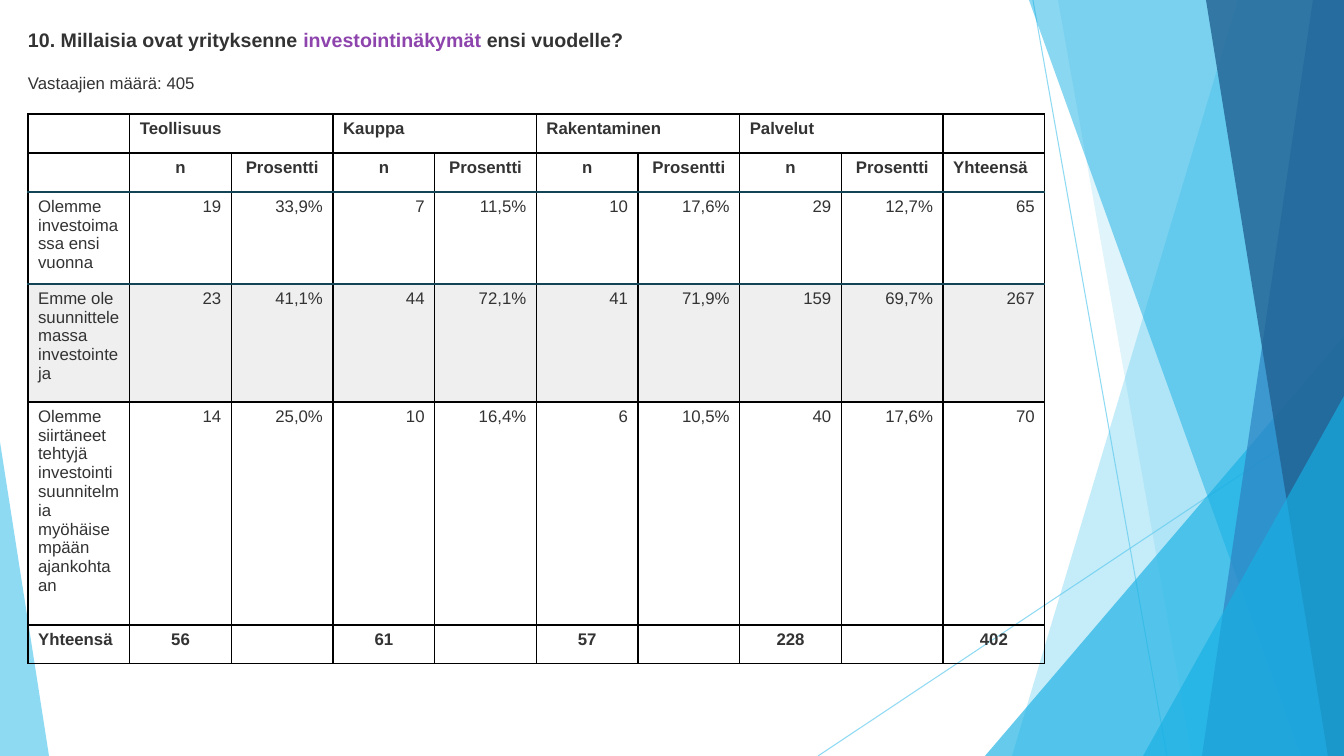
import pptx
import pptx.util
import pptx.dml.color
import pptx.enum.shapes
import pptx.enum.text
import pptx.oxml
import pptx.oxml.ns

W, H = 1344, 756
EMU_PER_PX = 914400 / 100.8
FONT, INK = "Arial", "333333"

RAYS = [((1033, 0), (1167, H)), ((W, 406), (818, H))]
FACETS = [
    ("band", (1238, 1012), "5FCBEF", 36),
    ("band", (1058, 1192), "5FCBEF", 20),
    ("triangle", (985, 336, 359, 1), "17B0E4", 66),
    ("band", (1029, 1301), "17B0E4", 50),
    ("band", (1313, 1202), "2E83C3", 70),
    ("band", (1206, 1328), "226292", 80),
    ("triangle", (1143, 396, 201, 1), "17B0E4", 66),
    ("triangle", (0, 442, 49, 0), "5FCBEF", 70),
]
TEXTS = [
    (28, 23, 14, True, [("10. Millaisia ovat yrityksenne ", INK),
                        ("investointinäkymät", "8E44AD"),
                        (" ensi vuodelle?", INK)]),
    (73, 20, 12, False, [("Vastaajien määrä: 405", INK)]),
]
SECTORS = ["Teollisuus", "Kauppa", "Rakentaminen", "Palvelut"]
ANSWERS = [
    ["Olemme investoimassa ensi vuonna",
     "19", "33,9%", "7", "11,5%", "10", "17,6%", "29", "12,7%", "65"],
    ["Emme ole suunnittelemassa investointeja",
     "23", "41,1%", "44", "72,1%", "41", "71,9%", "159", "69,7%", "267"],
    ["Olemme siirtäneet tehtyjä investointisuunnitelmia myöhäisempään ajankohtaan",
     "14", "25,0%", "10", "16,4%", "6", "10,5%", "40", "17,6%", "70"],
]
TOTALS = ["56", "61", "57", "228"]
ROWS = [
    [""] + [t for s in SECTORS for t in (s, "")] + [""],
    [""] + ["n", "Prosentti"] * len(SECTORS) + ["Yhteensä"],
    *ANSWERS,
    ["Yhteensä"] + [t for n in TOTALS for t in (n, "")] + ["402"],
]
ROW_HEIGHTS = [39, 39, 92, 118, 223, 39]
TABLE_X, TABLE_Y, TABLE_W = 28, 114, 1017
BOLD_ROWS, SHADED_ROW, ACCENT_EDGES = (0, 1, 5), 3, (2, 3)
GRID, ACCENT = ("000000", 1), ("124456", 2)


def px(n):
    return pptx.util.Emu(round(n * EMU_PER_PX))


def rgb(c):
    return pptx.dml.color.RGBColor.from_string(c)


def set_alpha(element, percent):
    clr = element.find(".//" + pptx.oxml.ns.qn("a:srgbClr"))
    clr.append(pptx.oxml.parse_xml(
        f'<a:alpha {pptx.oxml.ns.nsdecls("a")} val="{percent * 1000}"/>'))


def set_font(p, size, bold):
    p.font.name, p.font.size, p.font.bold = FONT, pptx.util.Pt(size), bold
    p.font.color.rgb = rgb(INK)


def add_ray(start, end):
    c = shapes.add_connector(pptx.enum.shapes.MSO_CONNECTOR.STRAIGHT,
                             *map(px, start + end))
    c.line.color.rgb = rgb("5FCBEF")
    c.line.width = pptx.util.Pt(0.75)
    pr = c.line._get_or_add_ln().getparent()
    set_alpha(pr, 70)
    pr.append(pptx.oxml.parse_xml(f'<a:effectLst {pptx.oxml.ns.nsdecls("a")}/>'))


def add_facet(kind, geometry, color, alpha):
    if kind == "band":
        top, bottom = geometry
        fb = shapes.build_freeform(top, 0, scale=EMU_PER_PX)
        fb.add_line_segments([(W, 0), (W, H), (bottom, H)], close=True)
        sp = fb.convert_to_shape()
    else:
        x, y, w, apex = geometry
        sp = shapes.add_shape(pptx.enum.shapes.MSO_SHAPE.ISOSCELES_TRIANGLE,
                              px(x), px(y), px(w), px(H - y))
        sp.adjustments[0] = apex
    sp.shadow.inherit = False
    sp.fill.solid()
    sp.fill.fore_color.rgb = rgb(color)
    set_alpha(sp.fill._xPr, alpha)
    sp.line.fill.background()


def add_text(y, h, size, bold, runs):
    tf = shapes.add_textbox(px(28), px(y), px(1288), px(h)).text_frame
    tf.word_wrap = True
    tf.margin_left = tf.margin_right = tf.margin_top = tf.margin_bottom = 0
    p = tf.paragraphs[0]
    set_font(p, size, bold)
    for text, color in runs:
        r = p.add_run()
        r.text = text
        r.font.color.rgb = rgb(color)


def set_borders(cell, row):
    edges = {"L": GRID, "R": GRID,
             "T": ACCENT if row in ACCENT_EDGES else GRID,
             "B": ACCENT if row + 1 in ACCENT_EDGES else GRID}
    pr = cell._tc.get_or_add_tcPr()
    for side, (color, width) in edges.items():
        pr.append(pptx.oxml.parse_xml(
            f'<a:ln{side} {pptx.oxml.ns.nsdecls("a")} w="{width * 12700}">'
            f'<a:solidFill><a:srgbClr val="{color}"/></a:solidFill></a:ln{side}>'))


def alignment(row, col):
    align = pptx.enum.text.PP_ALIGN
    if row == 0 or col == 0 or (row, col) == (1, 9):
        return align.LEFT
    return align.CENTER if row in BOLD_ROWS else align.RIGHT


def add_results():
    cols = len(ROWS[0])
    table = shapes.add_table(len(ROWS), cols, px(TABLE_X), px(TABLE_Y),
                             px(TABLE_W), px(sum(ROW_HEIGHTS))).table
    table.first_row = table.horz_banding = False
    for column in table.columns:
        column.width = px(TABLE_W / cols)
    for row, height in zip(table.rows, ROW_HEIGHTS):
        row.height = px(height)
    for i, texts in enumerate(ROWS):
        for j, text in enumerate(texts):
            cell = table.cell(i, j)
            set_borders(cell, i)
            if i == SHADED_ROW:
                cell.fill.solid()
                cell.fill.fore_color.rgb = rgb("EFEFEF")
            else:
                cell.fill.background()
            p = cell.text_frame.paragraphs[0]
            if text:
                p.add_run().text = text
            p.alignment = alignment(i, j)
            set_font(p, 12, i in BOLD_ROWS)
    for k in range(len(SECTORS)):
        table.cell(0, 2 * k + 1).merge(table.cell(0, 2 * k + 2))


prs = pptx.Presentation()
prs.slide_width, prs.slide_height = px(W), px(H)
shapes = prs.slides.add_slide(prs.slide_layouts[6]).shapes
for ray in RAYS:
    add_ray(*ray)
for facet in FACETS:
    add_facet(*facet)
for text in TEXTS:
    add_text(*text)
add_results()
prs.save("out.pptx")
